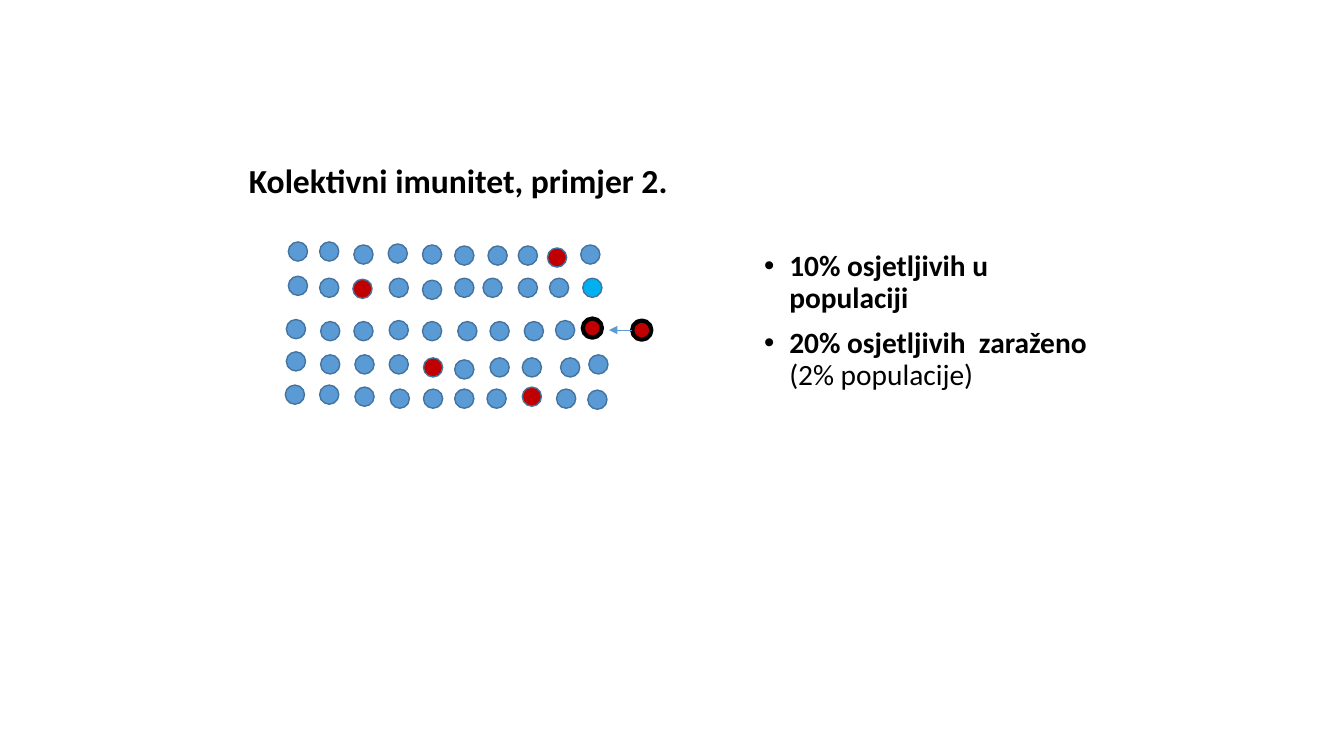
from lxml.etree import SubElement
from pptx import Presentation
from pptx.dml.color import RGBColor
from pptx.enum.shapes import MSO_CONNECTOR as Connector, MSO_SHAPE as Preset
from pptx.enum.text import MSO_ANCHOR as Anchor
from pptx.oxml.ns import qn
from pptx.util import Inches, Pt

TITLE = "Kolektivni imunitet, primjer 2."
BULLETS = [
    [("10% osjetljivih u populaciji", True)],
    [("20% osjetljivih  zaraženo ", True), ("(2% populacije)", False)],
]
COLORS = {
    "text": "000000",
    "immune": "5B9BD5",
    "susceptible": "C00000",
    "exposed": "00B0F0",
    "infected": "C00000",
    "outline": "43739E",
    "infected outline": "000000",
}
FONT = "Calibri"
DIAMETER = 0.19
POPULATION = [
    [(2.86, 2.4), (3.17, 2.4), (3.51, 2.43), (3.85, 2.42), (4.19, 2.43),
     (4.51, 2.44), (4.84, 2.44), (5.14, 2.44), (5.43, 2.46), (5.76, 2.43)],
    [(2.86, 2.74), (3.17, 2.76), (3.5, 2.77), (3.86, 2.76), (4.19, 2.78),
     (4.51, 2.76), (4.79, 2.76), (5.14, 2.76), (5.45, 2.76), (5.78, 2.76)],
    [(2.84, 3.17), (3.18, 3.19), (3.51, 3.19), (3.86, 3.18), (4.19, 3.19),
     (4.54, 3.19), (4.86, 3.19), (5.2, 3.19), (5.51, 3.18), (5.78, 3.16)],
    [(2.84, 3.49), (3.18, 3.52), (3.52, 3.52), (3.86, 3.52), (4.2, 3.55),
     (4.51, 3.57), (4.86, 3.55), (5.18, 3.55), (5.56, 3.55), (5.84, 3.52)],
    [(2.83, 3.82), (3.17, 3.82), (3.52, 3.84), (3.87, 3.86), (4.2, 3.86),
     (4.51, 3.86), (4.83, 3.86), (5.18, 3.84), (5.52, 3.86), (5.83, 3.87)],
]
STATUS = {
    (0, 8): "susceptible",
    (1, 2): "susceptible",
    (1, 9): "exposed",
    (2, 9): "infected",
    (3, 4): "susceptible",
    (4, 7): "susceptible",
}
CARRIER = (6.27, 3.18)
ARROW_TIP = 6.04


def color(name):
    return RGBColor.from_string(COLORS[name])


def add_person(slide, left, top, status):
    person = slide.shapes.add_shape(
        Preset.OVAL, Inches(left), Inches(top), Inches(DIAMETER), Inches(DIAMETER))
    person.shadow.inherit = False
    person.fill.solid()
    person.fill.fore_color.rgb = color(status)
    infected = status == "infected"
    person.line.color.rgb = color("infected outline" if infected else "outline")
    person.line.width = Pt(3 if infected else 1)


def add_arrow(slide, start, tip, height):
    arrow = slide.shapes.add_connector(
        Connector.STRAIGHT, Inches(start), Inches(height), Inches(tip), Inches(height))
    arrow.line.color.rgb = color("immune")
    arrow.line.width = Pt(0.5)
    SubElement(arrow.line._get_or_add_ln(), qn("a:tailEnd"), type="triangle")
    SubElement(arrow._element.spPr, qn("a:effectLst"))


def add_text(slide, box, paragraphs, size, anchor=Anchor.TOP, bulleted=False):
    frame = slide.shapes.add_textbox(*map(Inches, box)).text_frame
    frame.word_wrap = True
    frame.vertical_anchor = anchor
    for index, runs in enumerate(paragraphs):
        paragraph = frame.add_paragraph() if index else frame.paragraphs[0]
        paragraph.line_spacing = 0.9
        paragraph.font.name = FONT
        paragraph.font.size = Pt(size)
        paragraph.font.color.rgb = color("text")
        for text, bold in runs:
            run = paragraph.add_run()
            run.text = text
            run.font.bold = bold
        if bulleted:
            paragraph.space_before = Pt(10)
            properties = paragraph._p.get_or_add_pPr()
            properties.set("marL", str(Inches(0.25)))
            properties.set("indent", str(Inches(-0.25)))
            bullet_font = SubElement(properties, qn("a:buFont"), typeface="Arial")
            bullet_font.addnext(SubElement(properties, qn("a:buChar"), char="•"))
            defaults = properties.find(qn("a:defRPr"))
            properties.append(defaults)


def main():
    presentation = Presentation()
    presentation.slide_width = Inches(13.33)
    presentation.slide_height = Inches(7.5)
    slide = presentation.slides.add_slide(presentation.slide_layouts[6])

    add_text(slide, (2.37, 1.27, 8.62, 1.09), [[(TITLE, True)]], 24, Anchor.MIDDLE)
    for row, people in enumerate(POPULATION):
        for column, (left, top) in enumerate(people):
            add_person(slide, left, top, STATUS.get((row, column), "immune"))
    add_person(slide, *CARRIER, "infected")
    add_arrow(slide, CARRIER[0], ARROW_TIP, CARRIER[1] + DIAMETER / 2)
    add_text(slide, (7.48, 2.44, 3.5, 3.57), BULLETS, 21, bulleted=True)

    presentation.save("out.pptx")


if __name__ == "__main__":
    main()
